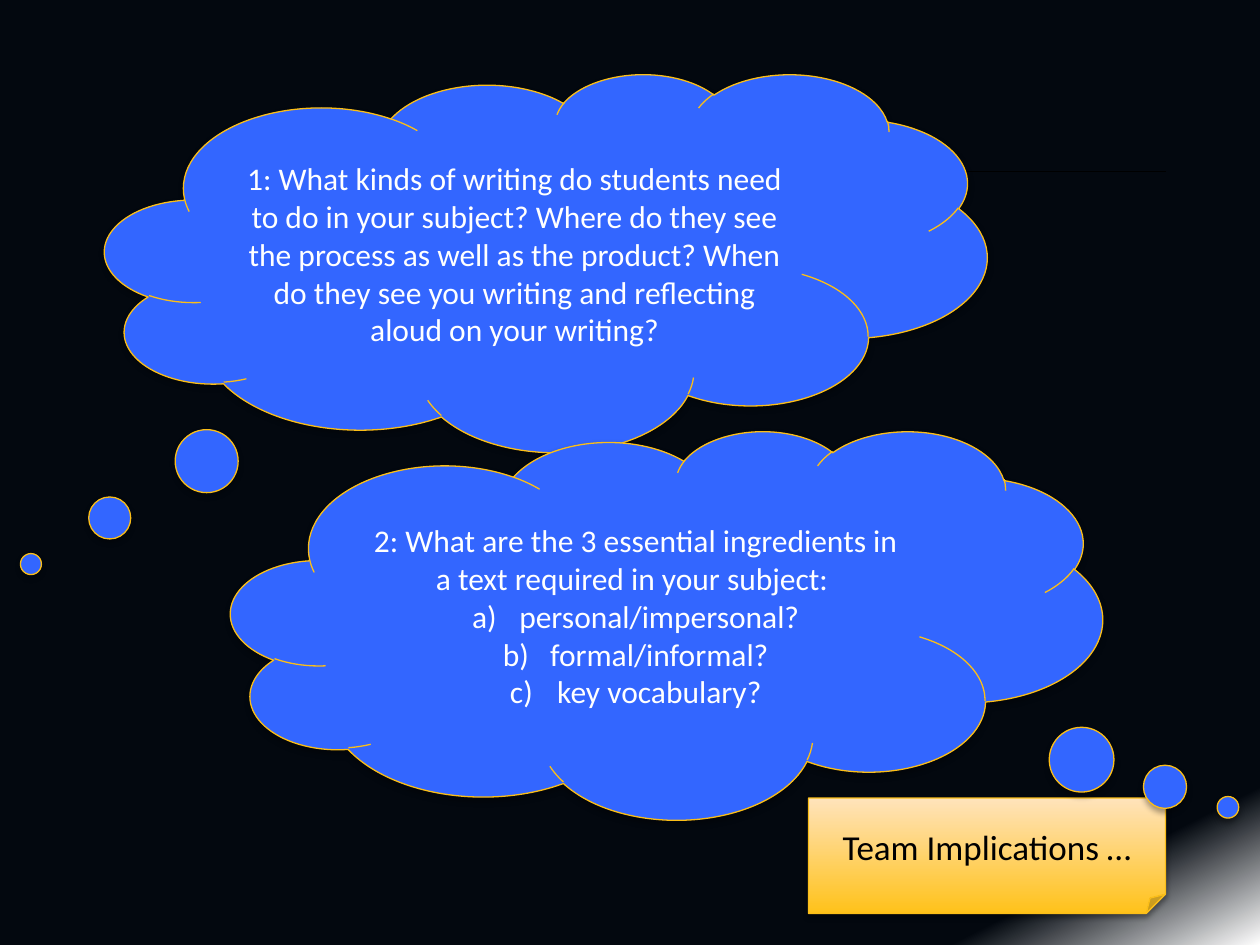
from copy import deepcopy

from lxml import etree
from pptx import Presentation
from pptx.dml.color import RGBColor
from pptx.enum.shapes import MSO_CONNECTOR, MSO_SHAPE
from pptx.enum.text import MSO_ANCHOR, PP_ALIGN
from pptx.oxml import parse_xml
from pptx.oxml.ns import nsdecls, qn
from pptx.util import Pt

CLOUD = MSO_SHAPE.CLOUD_CALLOUT
NOTE = MSO_SHAPE.FOLDED_CORNER
STRAIGHT = MSO_CONNECTOR.STRAIGHT
CENTER = PP_ALIGN.CENTER
MIDDLE = MSO_ANCHOR.MIDDLE

BLUE, GOLD, WHITE, BLACK, NIGHT = "3366FF", "FBBE18", "FFFFFF", "000000", "03080F"

WRITING_QUESTION = (
    "1: What kinds of writing do students need to do in your subject? "
    "Where do they see the process as well as the product? "
    "When do they see you writing and reflecting aloud on your writing?"
)
INGREDIENTS_QUESTION = (
    "2: What are the 3 essential ingredients in a text required in your subject: "
)
INGREDIENTS = ["personal/impersonal?", "formal/informal?", "key vocabulary?"]


def rgb(value):
    """Return the colour for a hex string."""
    return RGBColor.from_string(value)


def apply_format(target, values):
    """Set each named attribute on the target."""
    for name, value in values.items():
        setattr(target, name, value)


def set_gradient(fill, element, stops, angle):
    """Fill with (position, colour) stops at a clockwise angle."""
    fill.gradient()
    fill.gradient_angle = 360 - angle
    stop_list = element.find(".//" + qn("a:gsLst"))
    while len(stop_list) < len(stops):
        stop_list.append(deepcopy(stop_list[0]))
    for stop, (position, color) in zip(fill.gradient_stops, stops):
        stop.position = position
        stop.color.rgb = rgb(color)


def add_shadow(shape):
    """Give the shape a soft shadow straight below it."""
    shape.shadow.inherit = False
    effects = shape.element.spPr.find(qn("a:effectLst"))
    effects.append(parse_xml(
        f'<a:outerShdw {nsdecls("a")} blurRad="{Pt(3.1)}" dist="{Pt(1.8)}" '
        'dir="5400000" rotWithShape="0"><a:srgbClr val="000000">'
        '<a:alpha val="35000"/></a:srgbClr></a:outerShdw>'
    ))


def add_letter(paragraph):
    """Number the paragraph a), b), c) with a hanging indent."""
    properties = paragraph._p.get_or_add_pPr()
    properties.set("marL", str(Pt(27)))
    properties.set("indent", str(Pt(-27)))
    etree.SubElement(properties, qn("a:buFont"), typeface="+mj-lt")
    etree.SubElement(properties, qn("a:buAutoNum"), type="alphaLcParenR")


def write_text(shape, lines, size, color):
    """Write centred paragraphs into the shape and return them."""
    frame = shape.text_frame
    apply_format(frame, {"word_wrap": True, "vertical_anchor": MIDDLE})
    frame.text = "\n".join(lines)
    for paragraph in frame.paragraphs:
        paragraph.alignment = CENTER
        for run in paragraph.runs:
            apply_format(run.font, {"name": "Calibri", "size": Pt(size)})
            run.font.color.rgb = rgb(color)
    return frame.paragraphs


def add_outlined_shape(slide, kind, box):
    """Add a gold-outlined shape with a shadow."""
    shape = slide.shapes.add_shape(kind, *map(Pt, box))
    shape.line.color.rgb = rgb(GOLD)
    shape.line.width = Pt(0.75)
    add_shadow(shape)
    return shape


def add_cloud(slide, box, tail, lines):
    """Add a thought cloud and return its paragraphs."""
    cloud = add_outlined_shape(slide, CLOUD, box)
    cloud.fill.solid()
    cloud.fill.fore_color.rgb = rgb(BLUE)
    for index, offset in enumerate(tail):
        cloud.adjustments[index] = offset
    return write_text(cloud, lines, 18, WHITE)


def add_note(slide, box, text):
    """Add a sticky note with a golden gradient."""
    note = add_outlined_shape(slide, NOTE, box)
    set_gradient(note.fill, note.element, [(0, "FFC21A"), (1, "FFE3BB")], 270)
    write_text(note, [text], 20, BLACK)


def add_rule(slide, left, right, top):
    """Add a thin horizontal line."""
    rule = slide.shapes.add_connector(STRAIGHT, Pt(left), Pt(top), Pt(right), Pt(top))
    rule.line.color.rgb = rgb(BLACK)
    rule.line.width = Pt(0.75)
    etree.SubElement(rule.element.spPr, qn("a:effectLst"))


def main():
    """Build and save the slide."""
    presentation = Presentation()
    apply_format(presentation, {"slide_width": Pt(720), "slide_height": Pt(540)})
    slide = presentation.slides.add_slide(presentation.slide_layouts[6])
    background_stops = [(0, NIGHT), (0.9, NIGHT), (1, WHITE)]
    set_gradient(slide.background.fill, slide.element, background_stops, 63)

    add_rule(slide, 132, 666, 98)
    add_cloud(slide, (60, 42, 504, 216), (-0.584, 0.798), [WRITING_QUESTION])
    add_note(slide, (462, 456, 204, 66), "Team Implications …")
    paragraphs = add_cloud(
        slide, (132, 246, 498, 222), (0.644, 0.47), [INGREDIENTS_QUESTION, *INGREDIENTS]
    )
    for paragraph in paragraphs[1:]:
        add_letter(paragraph)
    presentation.save("out.pptx")


if __name__ == "__main__":
    main()
